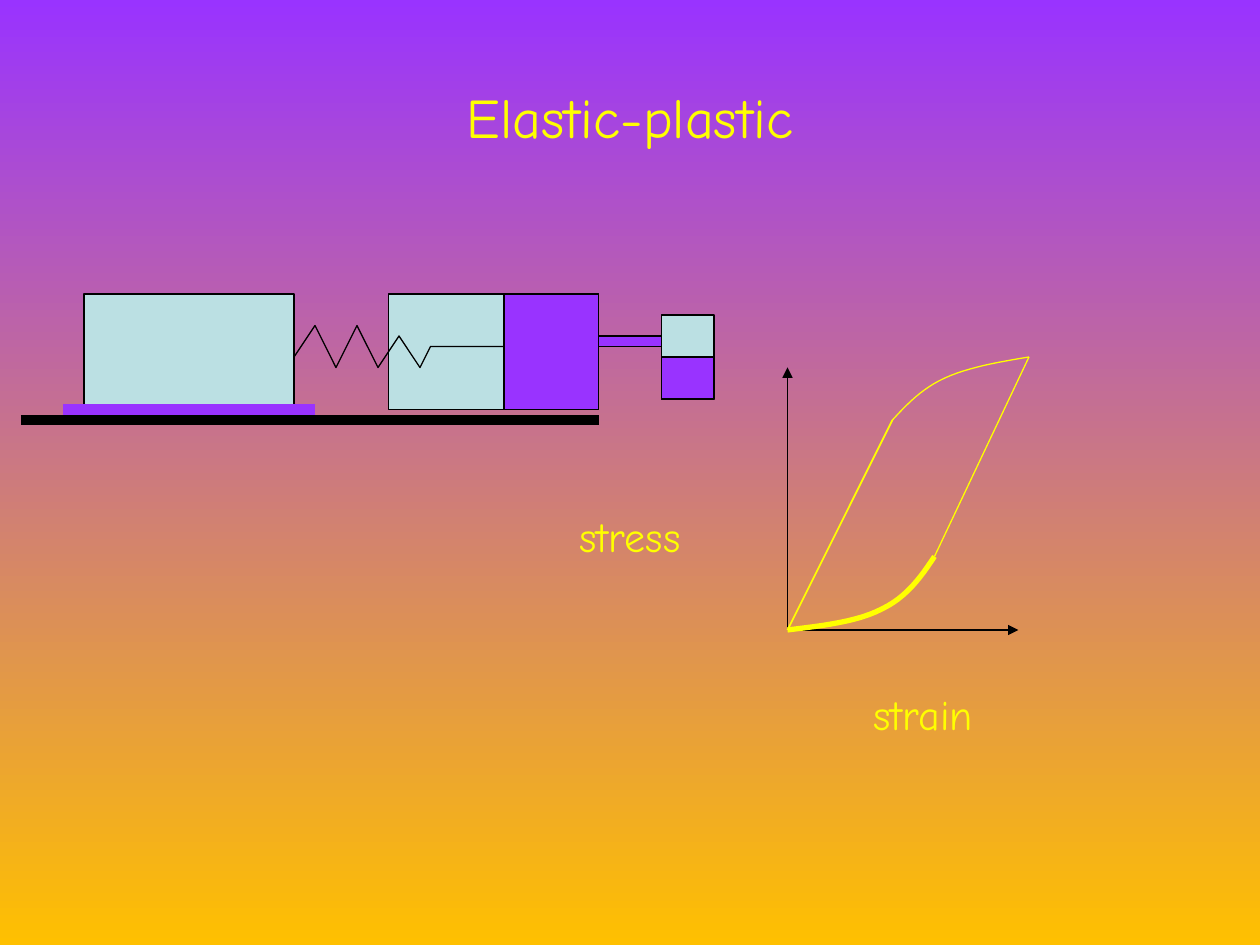
from dataclasses import dataclass

import lxml.etree
import pptx
import pptx.dml.color
import pptx.enum.shapes
import pptx.enum.text
import pptx.oxml.ns
import pptx.util

FONT = "Comic Neue"
BLACK = "000000"
VIOLET = "9933FF"
ORANGE = "FFC000"
YELLOW = "FFFF00"
PALE = "BBE0E3"
UNIT_CM = 2.54 / 12
CURVE_STEPS = 12

Point = tuple[float, float]


@dataclass
class Block:
    left: float
    top: float
    width: float
    height: float
    fill: str


@dataclass
class Stroke:
    start: Point
    end: Point
    color: str = BLACK
    weight: float = 0.75
    arrow: bool = False


@dataclass
class Outline:
    points: list[Point]
    color: str = BLACK
    weight: float = 0.75


def grid(units: float) -> pptx.util.Length:
    return pptx.util.Cm(units * UNIT_CM)


def rgb(color: str) -> pptx.dml.color.RGBColor:
    return pptx.dml.color.RGBColor.from_string(color)


def curve(points: list[Point]) -> list[Point]:
    result = [points[0]]
    for first in range(0, len(points) - 1, 3):
        a, b, c, d = points[first:first + 4]
        for step in range(1, CURVE_STEPS + 1):
            t = step / CURVE_STEPS
            s = 1 - t
            weights = (s ** 3, 3 * s * s * t, 3 * s * t * t, t ** 3)
            result.append(tuple(
                sum(w * value for w, value in zip(weights, values))
                for values in zip(a, b, c, d)
            ))
    return result


def format_line(line, color: str, weight: float) -> None:
    line.color.rgb = rgb(color)
    line.width = pptx.util.Pt(weight)


def draw_block(page, block: Block) -> None:
    shape = page.shapes.add_shape(
        pptx.enum.shapes.MSO_SHAPE.RECTANGLE,
        grid(block.left), grid(block.top), grid(block.width), grid(block.height),
    )
    shape.shadow.inherit = False
    shape.fill.solid()
    shape.fill.fore_color.rgb = rgb(block.fill)
    format_line(shape.line, BLACK, 0.75)


def draw_stroke(page, stroke: Stroke) -> None:
    connector = page.shapes.add_connector(
        pptx.enum.shapes.MSO_CONNECTOR.STRAIGHT,
        *(grid(value) for value in stroke.start + stroke.end),
    )
    format_line(connector.line, stroke.color, stroke.weight)
    properties = connector.element.spPr
    qn = pptx.oxml.ns.qn
    if stroke.arrow:
        outline = properties.find(qn("a:ln"))
        lxml.etree.SubElement(outline, qn("a:tailEnd"), type="triangle")
    lxml.etree.SubElement(properties, qn("a:effectLst"))


def draw_outline(page, outline: Outline) -> None:
    points = [(grid(x), grid(y)) for x, y in outline.points]
    builder = page.shapes.build_freeform(*points[0])
    builder.add_line_segments(points[1:], close=False)
    shape = builder.convert_to_shape()
    shape.shadow.inherit = False
    shape.fill.background()
    format_line(shape.line, outline.color, outline.weight)


def write(frame, text: str, *, size: float, color: str = YELLOW,
          align=pptx.enum.text.PP_ALIGN.LEFT) -> None:
    frame.word_wrap = True
    para = frame.paragraphs[0]
    para.alignment = align
    span = para.add_run()
    span.text = text
    span.font.name = FONT
    span.font.size = pptx.util.Pt(size)
    span.font.color.rgb = rgb(color)


def add_label(page, text: str, left: float, top: float, width: float) -> None:
    box = page.shapes.add_textbox(grid(left), grid(top), grid(width), grid(6))
    write(box.text_frame, text, size=24)


def add_title(page, text: str) -> None:
    title = page.shapes.title
    title.left, title.top = grid(6), grid(3.6)
    title.width, title.height = grid(108), grid(15)
    title.text_frame.vertical_anchor = pptx.enum.text.MSO_ANCHOR.MIDDLE
    write(title.text_frame, text, size=32, align=pptx.enum.text.PP_ALIGN.CENTER)


def paint_background(page) -> None:
    fill = page.background.fill
    fill.gradient()
    fill.gradient_angle = 270
    for stop, color, position in zip(fill.gradient_stops, (VIOLET, ORANGE), (0, 1)):
        stop.color.rgb = rgb(color)
        stop.position = position


ORIGIN = (75, 60)
YIELD_POINT = (85, 40)
PEAK = (98, 34)
UNLOADED = (89, 53)

PARTS = [
    Block(8, 28, 20, 11, PALE),
    Stroke((2, 40), (57, 40), weight=6),
    Stroke(ORIGIN, (75, 35), arrow=True),
    Stroke(ORIGIN, (97, 60), arrow=True),
    Stroke(ORIGIN, YIELD_POINT, YELLOW, 1),
    Outline(curve([YIELD_POINT, (86.4, 38.5), (87.8, 37), (90, 36),
                   (92.2, 35), (95, 34.5), PEAK]), YELLOW),
    Stroke(PEAK, UNLOADED, YELLOW),
    Stroke((6, 39), (30, 39), VIOLET, 6),
    Block(37, 28, 20, 11, PALE),
    Stroke((48, 28), (48, 39)),
    Block(57, 32, 6, 1, VIOLET),
    Block(63, 30, 5, 8, PALE),
    Block(63, 34, 5, 4, VIOLET),
    Block(48, 28, 9, 11, VIOLET),
    Outline([(28, 34), (30, 31), (32, 35), (34, 31), (36, 35),
             (38, 32), (40, 35), (41, 33), (48, 33)]),
    Outline(curve([UNLOADED, (87.7, 55), (86.3, 56.9), (84, 58),
                   (81.7, 59.2), (78.4, 59.6), ORIGIN]), YELLOW, 3),
]

DRAW = {Block: draw_block, Stroke: draw_stroke, Outline: draw_outline}


def main() -> None:
    deck = pptx.Presentation()
    deck.slide_width, deck.slide_height = pptx.util.Cm(25.4), pptx.util.Cm(19.05)
    page = deck.slides.add_slide(deck.slide_layouts[5])
    paint_background(page)
    add_title(page, "Elastic-plastic")
    for part in PARTS:
        DRAW[type(part)](page, part)
    add_label(page, "stress", 54, 48, 16)
    add_label(page, "strain", 82, 65, 13.5)
    deck.save("out.pptx")


if __name__ == "__main__":
    main()
